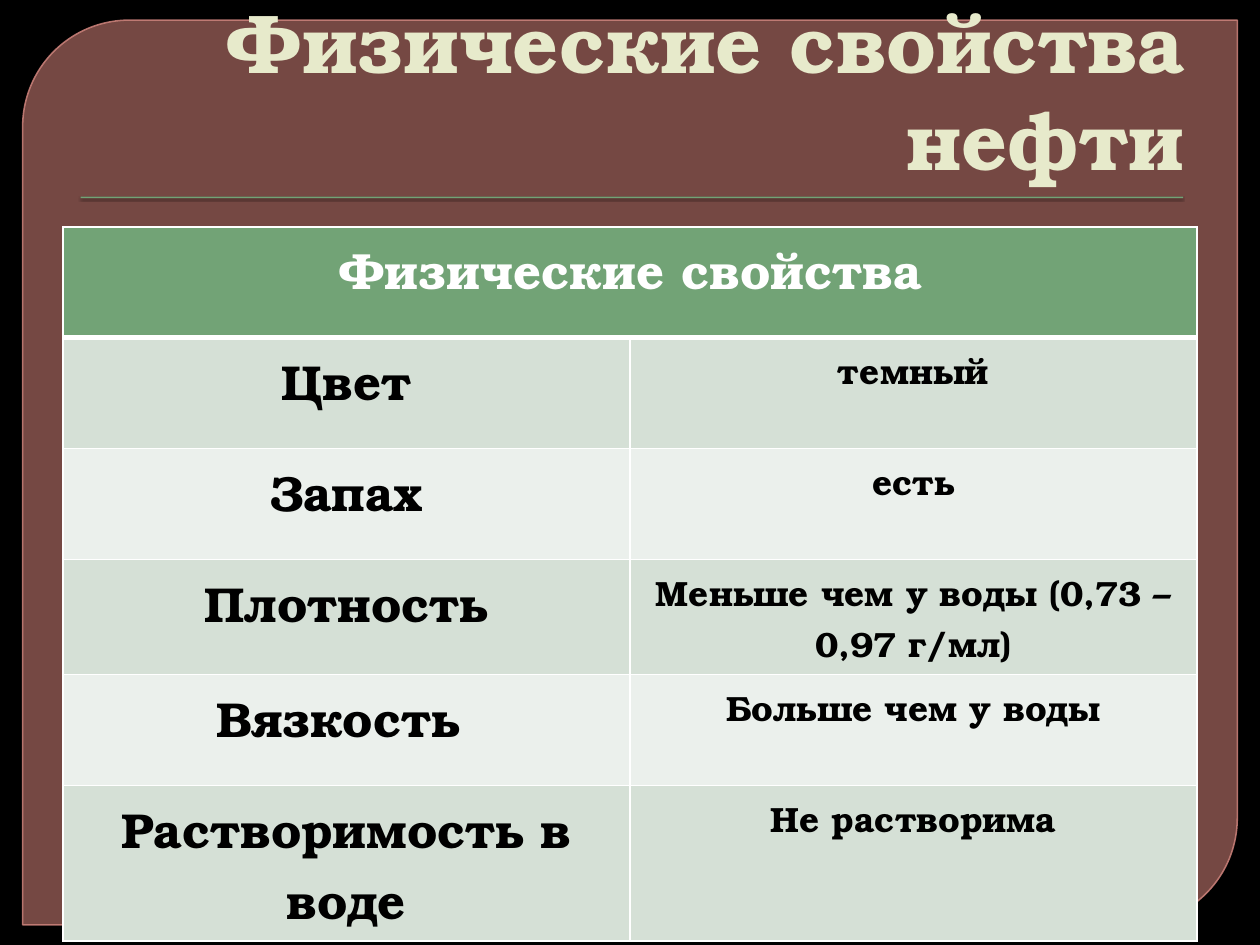
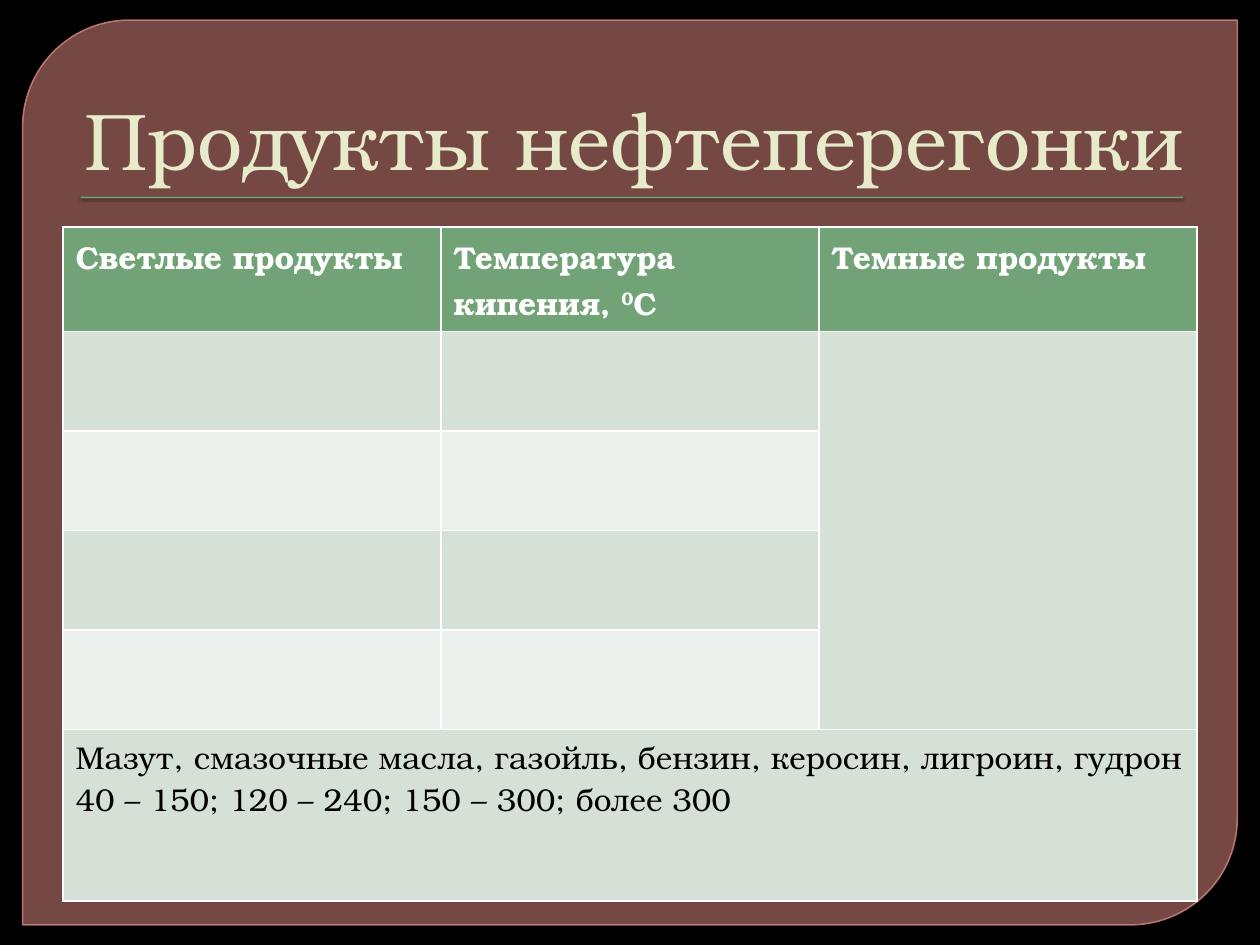
"""Two slides on crude oil: physical properties and distillation products."""
from dataclasses import dataclass

import pptx
import pptx.dml.color
import pptx.enum.shapes
import pptx.enum.text
import pptx.oxml
import pptx.oxml.ns
import pptx.presentation
import pptx.shapes.autoshape
import pptx.slide
import pptx.table
import pptx.text.text
import pptx.util
from lxml import etree

Inches = pptx.util.Inches
Pt = pptx.util.Pt
RGBColor = pptx.dml.color.RGBColor
Align = pptx.enum.text.PP_ALIGN
Shape = pptx.enum.shapes.MSO_SHAPE
qn = pptx.oxml.ns.qn

FONT = "TeX Gyre Bonum"
BLACK = RGBColor(0x00, 0x00, 0x00)
WHITE = RGBColor(0xFF, 0xFF, 0xFF)
ROSE = RGBColor(0xB5, 0x6F, 0x68)
ROSE_EDGE = RGBColor(0xCA, 0x81, 0x7A)
GREEN = RGBColor(0x72, 0xA3, 0x76)
GREEN_BANDS = (RGBColor(0xEB, 0xF0, 0xEC), RGBColor(0xD5, 0xE0, 0xD6))
CREAM = RGBColor(0xE7, 0xEA, 0xCB)
SUPERSCRIPT_MARK = "^"


@dataclass(frozen=True)
class TextStyle:
    """Look of the paragraphs in a title or a cell."""

    size: float
    color: RGBColor
    bold: bool = True
    align: Align = Align.LEFT


@dataclass(frozen=True)
class Entry:
    """Text of one cell and how many rows and columns it covers."""

    row: int
    column: int
    text: str
    style: TextStyle
    rows: int = 1
    columns: int = 1


@dataclass(frozen=True)
class TableSlide:
    """A titled slide with one banded table."""

    title: str
    title_bold: bool
    columns: int
    row_heights: tuple[float, ...]
    entries: tuple[Entry, ...]
    header_rule: float = 1


PROPERTY_HEAD = TextStyle(28, WHITE, align=Align.CENTER)
PROPERTY_NAME = TextStyle(28, BLACK, align=Align.CENTER)
PROPERTY_VALUE = TextStyle(20, BLACK, align=Align.CENTER)
PRODUCT_HEAD = TextStyle(18, WHITE)
PRODUCT_NOTE = TextStyle(18, BLACK, bold=False)

PROPERTIES = (
    ("Цвет", "темный"),
    ("Запах", "есть"),
    ("Плотность", "Меньше чем у воды (0,73 – 0,97 г/мл)"),
    ("Вязкость ", "Больше чем у воды"),
    ("Растворимость в воде", "Не растворима"),
)
PRODUCT_HEADS = ("Светлые продукты", "Температура кипения, ^0^С", "Темные продукты")
PRODUCT_CHOICES = (
    "Мазут, смазочные масла, газойль, бензин, керосин, лигроин, гудрон\n"
    "40 – 150; 120 – 240; 150 – 300; более 300"
)

SLIDES = (
    TableSlide(
        "Физические свойства нефти", True, 2, (0.88,) * 6,
        (Entry(0, 0, "Физические свойства", PROPERTY_HEAD, columns=2),)
        + tuple(
            Entry(row, column, text, style)
            for row, pair in enumerate(PROPERTIES, 1)
            for column, (text, style) in enumerate(zip(pair, (PROPERTY_NAME, PROPERTY_VALUE)))
        ),
        header_rule=3,
    ),
    TableSlide(
        "Продукты нефтеперегонки", False, 3, (0.79,) * 5 + (1.36,),
        tuple(Entry(0, column, head, PRODUCT_HEAD) for column, head in enumerate(PRODUCT_HEADS))
        + (
            Entry(1, 2, "", PRODUCT_NOTE, rows=4),
            Entry(5, 0, PRODUCT_CHOICES, PRODUCT_NOTE, columns=3),
        ),
    ),
)


def write(frame: pptx.text.text.TextFrame, text: str, style: TextStyle) -> None:
    """Write lines in one style, raising the parts between superscript marks."""
    for index, line in enumerate(text.split("\n")):
        paragraph = frame.add_paragraph() if index else frame.paragraphs[0]
        paragraph.alignment = style.align
        paragraph.font.name = FONT
        paragraph.font.size = Pt(style.size)
        paragraph.font.bold = style.bold
        paragraph.font.color.rgb = style.color
        for part, words in enumerate(line.split(SUPERSCRIPT_MARK)):
            run = paragraph.add_run()
            run.text = words
            if part % 2:
                run.font._element.set("baseline", "30000")


def set_alpha(shape: pptx.shapes.autoshape.Shape, fill: int, line: int) -> None:
    """Set the opacity of a shape's fill and outline in percent."""
    properties = shape._element.spPr
    for place, percent in (("a:solidFill", fill), ("a:ln/a:solidFill", line)):
        color = properties.find("/".join(qn(tag) for tag in place.split("/")))[0]
        etree.SubElement(color, qn("a:alpha"), val=str(percent * 1000))


def decorate_layout(layout: pptx.slide.SlideLayout, slide: pptx.slide.Slide) -> None:
    """Build the rounded panel and title rule, and hand them to the layout."""
    panel = slide.shapes.add_shape(
        Shape.ROUND_2_DIAG_RECTANGLE, Inches(0.18), Inches(0.16), Inches(9.64), Inches(7.18)
    )
    panel.adjustments[0] = 0.118
    panel.adjustments[1] = 0
    panel.shadow.inherit = False
    panel.fill.solid()
    panel.fill.fore_color.rgb = ROSE
    panel.line.color.rgb = ROSE_EDGE
    panel.line.width = Pt(0.87)
    set_alpha(panel, fill=65, line=88)

    title_rule = slide.shapes.add_shape(
        Shape.RECTANGLE, Inches(0.64), Inches(1.56), Inches(8.75), Pt(1)
    )
    title_rule.fill.solid()
    title_rule.fill.fore_color.rgb = GREEN
    title_rule.line.fill.background()
    title_rule.shadow.inherit = False
    effects = title_rule._element.spPr.find(qn("a:effectLst"))
    shadow = etree.SubElement(
        effects, qn("a:outerShdw"), blurRad=str(Pt(1)), dist=str(Pt(1)), dir=str(90 * 60000)
    )
    shade = etree.SubElement(shadow, qn("a:srgbClr"), val=str(BLACK))
    etree.SubElement(shade, qn("a:alpha"), val="75000")

    for position, part in enumerate((panel, title_rule), 2):
        layout.shapes._spTree.insert(position, part._element)


def set_borders(cell: pptx.table._Cell, top: float, bottom: float) -> None:
    """Draw white borders round a cell, with widths in points."""
    properties = cell._tc.get_or_add_tcPr()
    for side, width in (("L", 1), ("R", 1), ("T", top), ("B", bottom)):
        border = etree.SubElement(properties, qn(f"a:ln{side}"), w=str(Pt(width)))
        fill = etree.SubElement(border, qn("a:solidFill"))
        etree.SubElement(fill, qn("a:srgbClr"), val=str(WHITE))


def add_title(slide: pptx.slide.Slide, text: str, bold: bool) -> None:
    """Place the right-aligned title on the rule."""
    title = slide.shapes.title
    title.left, title.top = Inches(0.5), Inches(0.28)
    title.width, title.height = Inches(9), Inches(1.25)
    frame = title.text_frame
    frame.word_wrap = True
    frame.auto_size = pptx.enum.text.MSO_AUTO_SIZE.NONE
    frame.vertical_anchor = pptx.enum.text.MSO_ANCHOR.BOTTOM
    write(frame, text, TextStyle(46, CREAM, bold, Align.RIGHT))


def add_table(slide: pptx.slide.Slide, content: TableSlide) -> None:
    """Add the banded table and fill in its entries."""
    heights = content.row_heights
    table = slide.shapes.add_table(
        len(heights), content.columns, Inches(0.5), Inches(1.8), Inches(9), Inches(sum(heights))
    ).table
    for row, height in enumerate(heights):
        table.rows[row].height = Inches(height)
        for column in range(content.columns):
            cell = table.cell(row, column)
            set_borders(
                cell,
                top=content.header_rule if row == 1 else 1,
                bottom=content.header_rule if row == 0 else 1,
            )
            cell.fill.solid()
            cell.fill.fore_color.rgb = GREEN_BANDS[row % 2] if row else GREEN
    for entry in content.entries:
        cell = table.cell(entry.row, entry.column)
        if entry.rows * entry.columns > 1:
            cell.merge(
                table.cell(entry.row + entry.rows - 1, entry.column + entry.columns - 1)
            )
        if entry.text:
            write(cell.text_frame, entry.text, entry.style)


def main() -> None:
    """Build the presentation and save it."""
    deck = pptx.Presentation()
    deck.slide_width, deck.slide_height = Inches(10), Inches(7.5)
    background = deck.slide_master.background.fill
    background.solid()
    background.fore_color.rgb = BLACK
    layout = deck.slide_layouts.get_by_name("Title Only")
    for index, content in enumerate(SLIDES):
        slide = deck.slides.add_slide(layout)
        if index == 0:
            decorate_layout(layout, slide)
        add_title(slide, content.title, content.title_bold)
        add_table(slide, content)
    deck.save("out.pptx")


if __name__ == "__main__":
    main()
